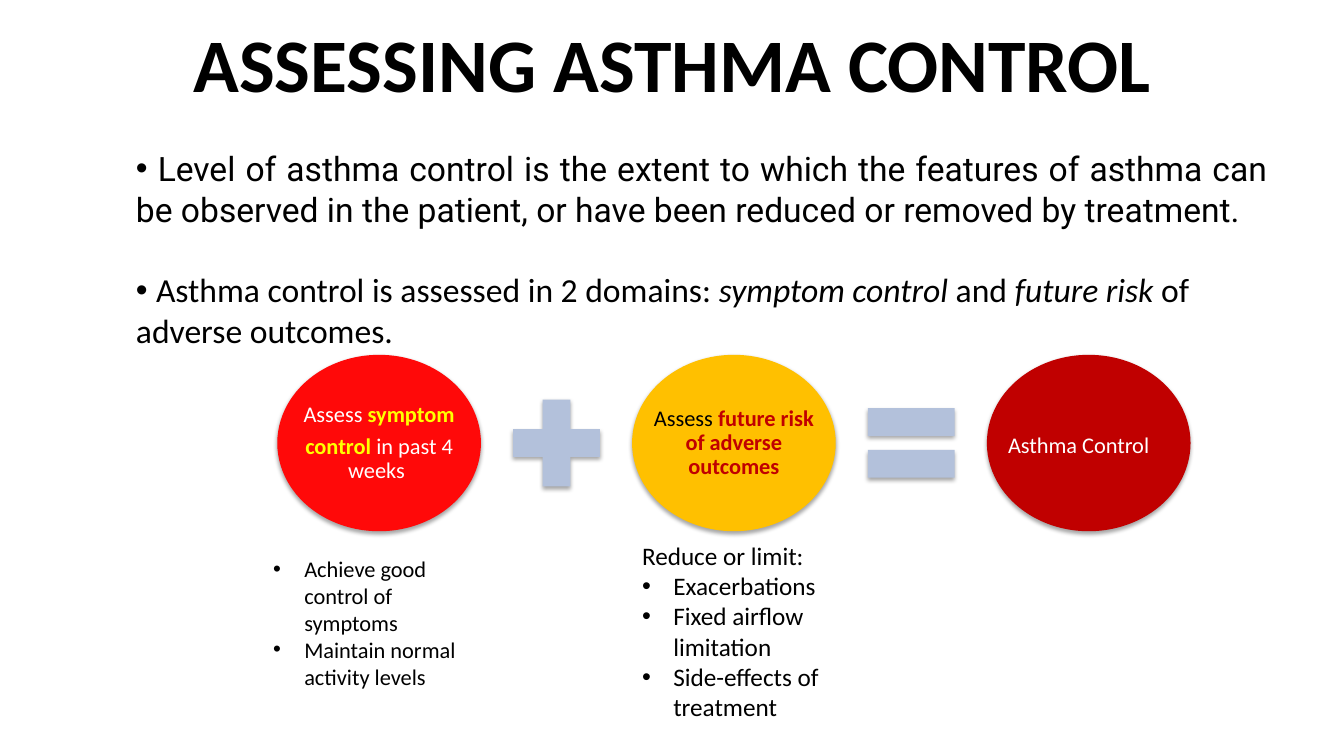
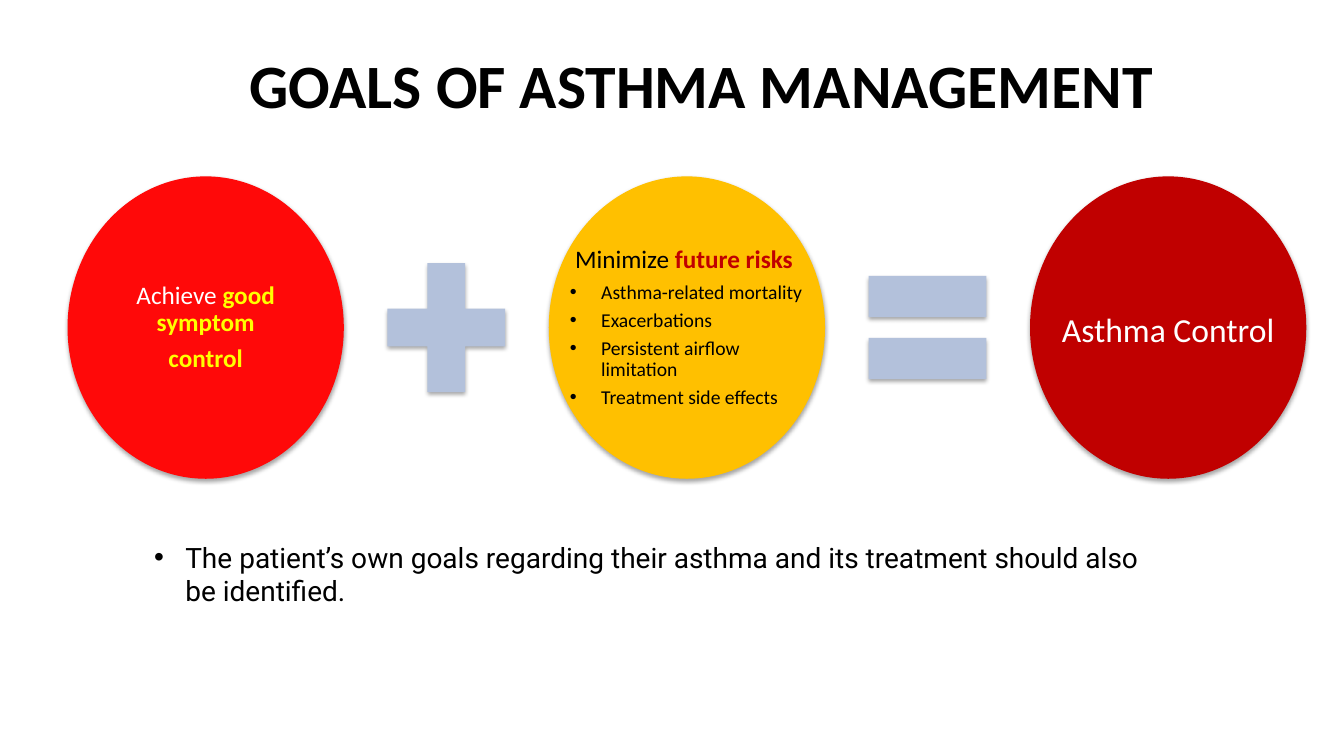
from dataclasses import dataclass

from lxml.etree import SubElement
from pptx import Presentation
from pptx.dml.color import RGBColor
from pptx.enum.shapes import MSO_SHAPE
from pptx.enum.text import MSO_ANCHOR, PP_ALIGN
from pptx.oxml.ns import qn
from pptx.util import Emu, Pt

PX = 9144
WIDTH, HEIGHT = 1333, 750
BLACK = RGBColor(0x00, 0x00, 0x00)
WHITE = RGBColor(0xFF, 0xFF, 0xFF)
YELLOW = RGBColor(0xFF, 0xFF, 0x00)
RED = RGBColor(0xFF, 0x09, 0x09)
AMBER = RGBColor(0xFF, 0xC0, 0x00)
CRIMSON = RGBColor(0xC0, 0x00, 0x00)
SIGN_BLUE = RGBColor(0xB3, 0xC1, 0xDB)
CALIBRI, ROBOTO = "Calibri", "Roboto"
LABEL_INSET = 21
OVAL_TEXT_MARGIN = 0.1464
SIGN_RATIO, GAP_RATIO = 0.58, 0.081
BULLET_INDENT = 31


@dataclass
class Run:
    """A stretch of text with one look."""
    text: str
    color: RGBColor = BLACK
    bold: bool = False
    italic: bool = False
    font: str = CALIBRI


@dataclass
class Para:
    """A paragraph of runs with its layout."""
    runs: list
    size: int
    align: PP_ALIGN = PP_ALIGN.LEFT
    indent: int = 0
    bullet: bool = False
    line: float = 1.0
    after: float = 0


def px(n):
    """Turn px into EMU."""
    return Emu(round(n * PX))


def bullets(size, *texts, font=CALIBRI, **layout):
    """Return one hanging bullet paragraph for each text."""
    return [Para([Run(t, font=font)], size, indent=BULLET_INDENT, bullet=True, **layout)
            for t in texts]


def label(size, *runs, align=PP_ALIGN.CENTER, line=0.9):
    """Return a paragraph for the inside of an oval."""
    return Para(list(runs), size, align, line=line, after=size * 0.35)


def add_bullet(p, indent):
    """Give a paragraph a bullet with a hanging indent."""
    pPr = p._p.get_or_add_pPr()
    pPr.set("marL", str(px(indent)))
    pPr.set("indent", str(-px(indent)))
    SubElement(pPr, qn("a:buFont"), typeface="Arial")
    SubElement(pPr, qn("a:buChar"), char="•")


def write(tf, paras):
    """Fill a text frame with paragraphs."""
    tf.word_wrap = True
    for i, para in enumerate(paras):
        p = tf.add_paragraph() if i else tf.paragraphs[0]
        p.alignment = para.align
        p.line_spacing = para.line
        p.space_after = Pt(para.after)
        if para.bullet:
            add_bullet(p, para.indent)
        for run in para.runs:
            r = p.add_run()
            r.text = run.text
            r.font.name = run.font
            r.font.size = Pt(para.size)
            r.font.color.rgb = run.color
            r.font.bold = run.bold
            r.font.italic = run.italic


def set_insets(tf, x, y):
    """Set the side and the top and bottom insets of a text frame."""
    tf.margin_left = tf.margin_right = px(x)
    tf.margin_top = tf.margin_bottom = px(y)


def text_box(s, left, top, width, height, paras):
    """Add a text box and return its text frame."""
    tf = s.shapes.add_textbox(px(left), px(top), px(width), px(height)).text_frame
    write(tf, paras)
    return tf


def title(s, left, top, height, text, size):
    """Add the centred bold slide title."""
    paras = [Para([Run(text, bold=True)], size, PP_ALIGN.CENTER)]
    set_insets(text_box(s, left, top, 1200, height, paras), 0, 0)


def shadowed_shape(s, preset, left, top, width, height, color):
    """Add a filled shape with a soft shadow below it."""
    sp = s.shapes.add_shape(preset, px(left), px(top), px(width), px(height))
    sp.fill.solid()
    sp.fill.fore_color.rgb = color
    sp.line.fill.background()
    sp.shadow.inherit = False
    effects = sp._element.spPr.find(qn("a:effectLst"))
    shadow = SubElement(effects, qn("a:outerShdw"), blurRad=str(Pt(3.1)), dist=str(Pt(1.8)),
                        dir="5400000", algn="t", rotWithShape="0")
    clr = SubElement(shadow, qn("a:srgbClr"), val=str(BLACK))
    SubElement(clr, qn("a:alpha"), val="35000")
    return sp


def equation(s, left, top, width, height, labels):
    """Add three labelled ovals joined by a plus and an equals sign."""
    sign = width * SIGN_RATIO
    gap = width * GAP_RATIO
    pitch = width + sign + 2 * gap
    sign_top = top + (height - sign * height / width) / 2 if height > width else top + (height - sign) / 2
    sign_height = top + height - sign_top - (sign_top - top)
    signs = (MSO_SHAPE.MATH_PLUS, MSO_SHAPE.MATH_EQUAL, None)
    for i, (color, paras, preset) in enumerate(zip((RED, AMBER, CRIMSON), labels, signs)):
        x = left + i * pitch
        sp = shadowed_shape(s, MSO_SHAPE.OVAL, x, top, width, height, color)
        tf = sp.text_frame
        tf.vertical_anchor = MSO_ANCHOR.MIDDLE
        set_insets(tf, LABEL_INSET - width * OVAL_TEXT_MARGIN, 0)
        write(tf, paras)
        if preset:
            shadowed_shape(s, preset, x + width + gap, sign_top, sign, sign_height, SIGN_BLUE)


def control_slide(s):
    """Build the slide on assessing control."""
    title(s, 67, 17, 91, "ASSESSING ASTHMA CONTROL", 54)
    text_box(s, 125, 142, 1142, 495, [
        Para([Run(" Level of asthma control is the extent to which the features of asthma can "
                  "be observed in the patient, or have been reduced or removed by treatment.",
                  font=ROBOTO)], 24, PP_ALIGN.JUSTIFY, bullet=True, after=29),
        Para([Run(" ", font=ROBOTO),
              Run("Asthma control is assessed in 2 domains: "),
              Run("symptom control ", italic=True),
              Run("and "),
              Run("future risk ", italic=True),
              Run("of adverse outcomes.")], 24, bullet=True),
    ])
    equation(s, 275, 352, 202, 175, [
        [label(16, Run("Assess ", WHITE), Run("symptom", YELLOW, True)),
         label(16, Run("control ", YELLOW, True), Run("in past 4 weeks ", WHITE))],
        [label(16, Run("Assess "), Run("future risk of adverse outcomes", CRIMSON, True))],
        [label(16, Run("Asthma Control", WHITE), align=PP_ALIGN.LEFT, line=1.1)],
    ])
    text_box(s, 261, 546, 230, 145, bullets(
        16, "Achieve good control of symptoms", "Maintain normal activity levels"))
    text_box(s, 627, 531, 230, 222, [Para([Run("Reduce or limit:")], 18)] + bullets(
        18, "Exacerbations", "Fixed airflow limitation", "Side-effects of treatment"))


def goals_slide(s):
    """Build the slide on management goals."""
    title(s, 96, 47, 74, "GOALS OF ASTHMA MANAGEMENT", 44)
    equation(s, 67, 175, 274, 300, [
        [label(18, Run("Achieve ", WHITE), Run("good symptom", YELLOW, True)),
         label(18, Run("control", YELLOW, True))],
        [label(18, Run("Minimize "), Run("future risks ", CRIMSON, True))] + bullets(
            14, "Asthma-related mortality", "Exacerbations", "Persistent airflow limitation",
            "Treatment side effects", line=0.9, after=4.9),
        [label(24, Run("Asthma Control", WHITE), line=1.1)],
    ])
    text_box(s, 143, 531, 1016, 77, bullets(
        20, "The patient’s own goals regarding their asthma and its treatment should also "
        "be identified.", font=ROBOTO))


def main():
    """Build and save the presentation."""
    prs = Presentation()
    prs.slide_width, prs.slide_height = px(WIDTH), px(HEIGHT)
    for build in (control_slide, goals_slide):
        build(prs.slides.add_slide(prs.slide_layouts[6]))
    prs.save("out.pptx")


if __name__ == "__main__":
    main()
